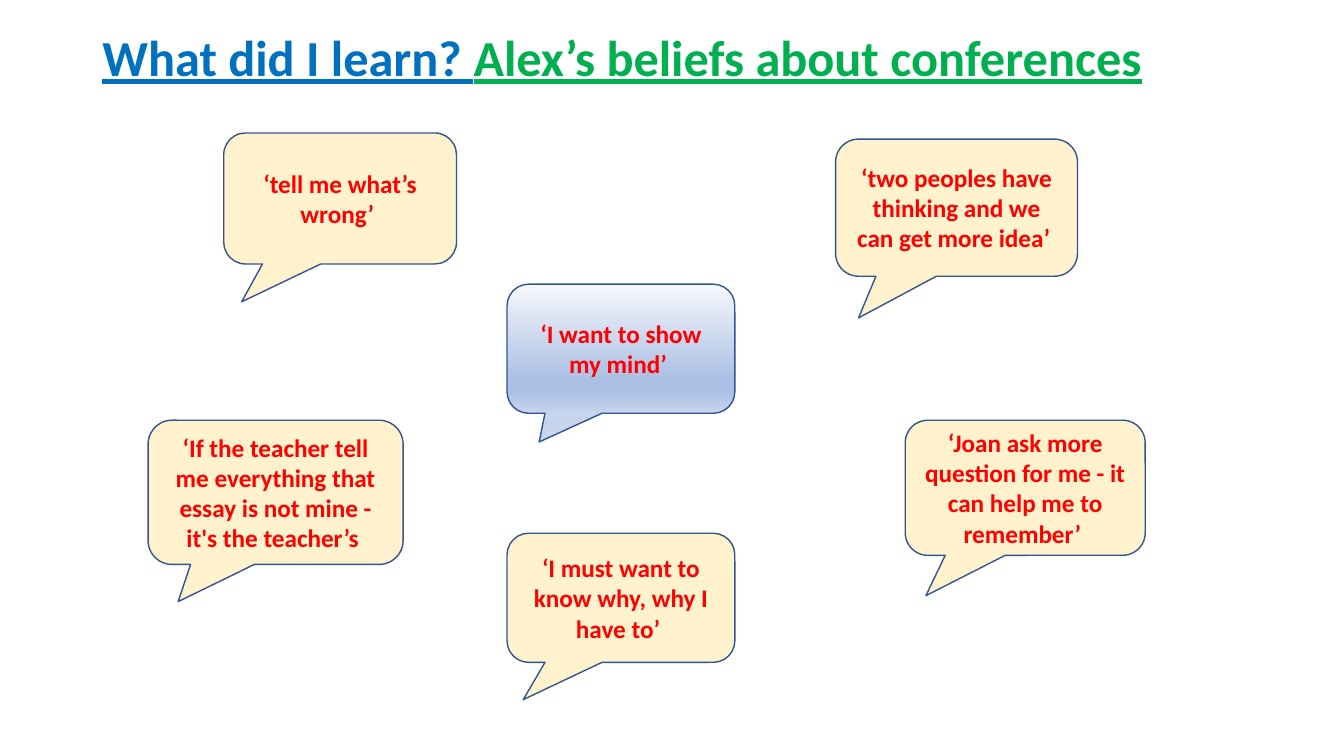
from lxml.etree import SubElement
from pptx import Presentation
from pptx.dml.color import RGBColor
from pptx.enum.shapes import MSO_SHAPE as Preset
from pptx.enum.text import MSO_ANCHOR as Anchor, MSO_AUTO_SIZE as AutoSize, PP_ALIGN as Align
from pptx.oxml.ns import qn
from pptx.util import Pt

COLORS = {
    "question": "0070C0",
    "topic": "00B050",
    "quote": "FF0000",
    "bubble": "FFF2CC",
    "outline": "325491",
    "sky_top": "F6F8FC",
    "sky_mid": "ABC0E4",
    "sky_base": "C7D5ED",
}
SKY_STOPS = [(0, "sky_top"), (74, "sky_mid"), (83, "sky_mid"), (100, "sky_base")]

BELIEFS = [
    ((159.8, 95, 166.3, 93.6), (-0.423, 0.789), "‘tell me what’s wrong’ ", False),
    ((362.2, 380.9, 162.7, 92.2), (-0.429, 0.789),
     "‘I must want to know why, why I have to’ ", False),
    ((596.9, 99.4, 172.8, 97.9), (-0.405, 0.804),
     "‘two peoples have thinking and we can get more idea’ ", False),
    ((105.8, 300.2, 182.2, 103), (-0.382, 0.758),
     "‘If the teacher tell me everything that essay is not mine - it's the teacher’s ", False),
    ((362.2, 203, 162.7, 92.2), (-0.359, 0.722), "‘I want to show my mind’ ", True),
    ((646.6, 300.2, 171.4, 96.5), (-0.414, 0.799),
     "‘Joan ask more question for me - it can help me to remember’ ", False),
]


def rgb(role):
    """Return the colour for a role."""
    return RGBColor.from_string(COLORS[role])


def add_run(paragraph, words, size, role, underline=False):
    """Append one bold Calibri run."""
    run = paragraph.add_run()
    run.text = words
    font = run.font
    font.name, font.size, font.bold = "Calibri", Pt(size), True
    font.underline = underline
    font.color.rgb = rgb(role)


def fill_sky(bubble):
    """Fill a bubble with the top-to-bottom blue gradient."""
    bubble.fill.gradient()
    bubble.fill.gradient_angle = 270
    stops = bubble.element.spPr.find(qn("a:gradFill")).find(qn("a:gsLst"))
    for stop in list(stops):
        stops.remove(stop)
    for percent, role in SKY_STOPS:
        stop = SubElement(stops, qn("a:gs"), pos=str(percent * 1000))
        SubElement(stop, qn("a:srgbClr"), val=COLORS[role])


def place_heading(slide, box):
    """Set the two-coloured heading in the title placeholder."""
    heading = slide.shapes.title
    heading.left, heading.top, heading.width, heading.height = map(Pt, box)
    frame = heading.text_frame
    frame.word_wrap, frame.auto_size = True, AutoSize.NONE
    frame.vertical_anchor = Anchor.MIDDLE
    line = frame.paragraphs[0]
    line.alignment, line.line_spacing = Align.LEFT, 0.9
    add_run(line, "What did I learn? ", 36, "question", True)
    add_run(line, "Alex’s beliefs about conferences", 36, "topic", True)


def place_belief(slide, box, tail, quote, highlighted):
    """Draw one speech bubble with its quote."""
    bubble = slide.shapes.add_shape(Preset.ROUNDED_RECTANGULAR_CALLOUT, *map(Pt, box))
    bubble.shadow.inherit = False
    for index, value in enumerate((*tail, 0.16667)):
        bubble.adjustments[index] = value
    if highlighted:
        fill_sky(bubble)
    else:
        bubble.fill.solid()
        bubble.fill.fore_color.rgb = rgb("bubble")
    bubble.line.color.rgb = rgb("outline")
    bubble.line.width = Pt(1)
    frame = bubble.text_frame
    frame.word_wrap = True
    frame.vertical_anchor = Anchor.MIDDLE
    line = frame.paragraphs[0]
    line.alignment = Align.CENTER
    add_run(line, quote, 18, "quote")


def main():
    """Build and save the slide."""
    deck = Presentation()
    deck.slide_width, deck.slide_height = Pt(960), Pt(540)
    slide = deck.slides.add_slide(deck.slide_layouts.get_by_name("Title Only"))
    place_heading(slide, (66, 15.1, 828, 55.4))
    for belief in BELIEFS:
        place_belief(slide, *belief)
    deck.save("out.pptx")


if __name__ == "__main__":
    main()
